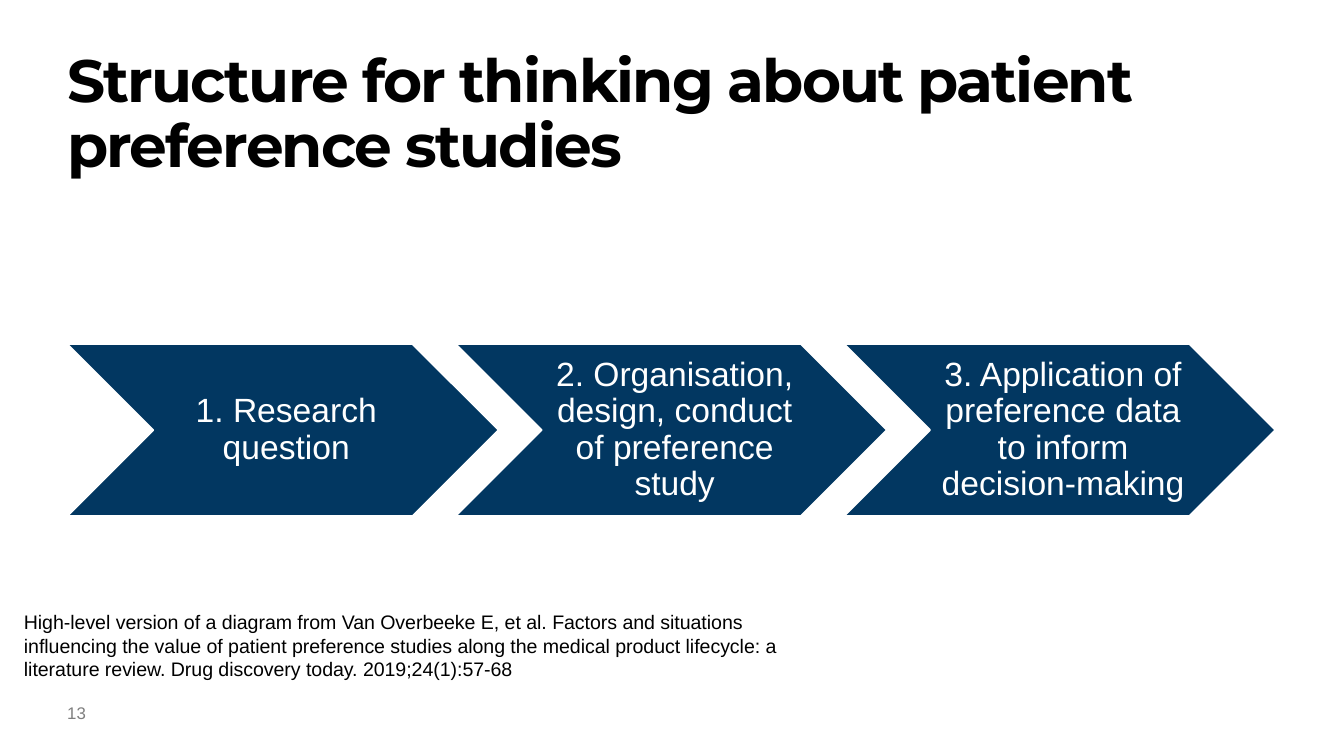
import dataclasses
import typing

import pptx
import pptx.dml.color
import pptx.enum.shapes
import pptx.enum.text
import pptx.util

SCALE = 4572  # EMU in one px, 200 px to the inch
ALIGN = pptx.enum.text.PP_ALIGN
ANCHOR = pptx.enum.text.MSO_ANCHOR


@dataclasses.dataclass(frozen=True)
class Theme:
    navy: str = "023761"
    white: str = "FFFFFF"
    black: str = "000000"
    grey: str = "7F7F7F"
    head: str = "Montserrat"
    body: str = "Arial"
    title: float = 32
    step: float = 18
    note: float = 10.5
    page: float = 9


class Box(typing.NamedTuple):
    left: int
    top: int
    width: int
    height: int


class Style(typing.NamedTuple):
    font: str
    size: float
    color: str
    bold: bool = False
    align: ALIGN = ALIGN.LEFT
    anchor: ANCHOR = ANCHOR.TOP
    inset: tuple[int, int, int, int] = (0, 0, 0, 0)
    lines: float = 1.0


THEME = Theme()
TITLE = Style(THEME.head, THEME.title, THEME.black, bold=True, lines=0.9)
STEP = Style(THEME.body, THEME.step, THEME.white, align=ALIGN.CENTER,
             anchor=ANCHOR.MIDDLE, inset=(16, 6, 6, 6), lines=0.9)
NOTE = Style(THEME.body, THEME.note, THEME.black, inset=(20, 10, 20, 10))
PAGE = Style(THEME.body, THEME.page, THEME.grey)

FIRST = Box(100, 512, 642, 256)
PITCH = 578
STEPS = (
    "1. Research question",
    "2. Organisation, design, conduct of preference study",
    "3. Application of preference data to inform decision-making",
)
SOURCE = (
    "High-level version of a diagram from Van Overbeeke E, et al. Factors and "
    "situations influencing the value of patient preference studies along the "
    "medical product lifecycle: a literature review. Drug discovery today. "
    "2019;24(1):57-68"
)


def px(count: int) -> pptx.util.Emu:
    return pptx.util.Emu(count * SCALE)


def rgb(code: str) -> pptx.dml.color.RGBColor:
    return pptx.dml.color.RGBColor.from_string(code)


def write(shape, text: str, style: Style) -> None:
    frame = shape.text_frame
    frame.text = text
    frame.word_wrap = True
    frame.auto_size = pptx.enum.text.MSO_AUTO_SIZE.NONE
    frame.vertical_anchor = style.anchor
    (frame.margin_left, frame.margin_top,
     frame.margin_right, frame.margin_bottom) = map(px, style.inset)
    para = frame.paragraphs[0]
    para.alignment = style.align
    para.line_spacing = style.lines
    font = para.runs[0].font
    font.name = style.font
    font.size = pptx.util.Pt(style.size)
    font.bold = style.bold
    font.color.rgb = rgb(style.color)


def add_title(slide, box: Box, text: str) -> None:
    title = slide.shapes.title
    title.left, title.top, title.width, title.height = map(px, box)
    write(title, text, TITLE)
    run = title.text_frame.paragraphs[0].runs[0]
    run._r.get_or_add_rPr().set("spc", "-100")


def add_text(slide, box: Box, text: str, style: Style) -> None:
    write(slide.shapes.add_textbox(*map(px, box)), text, style)


def add_step(slide, box: Box, text: str) -> None:
    kind = pptx.enum.shapes.MSO_SHAPE.CHEVRON
    shape = slide.shapes.add_shape(kind, *map(px, box))
    shape.shadow.inherit = False
    shape.fill.solid()
    shape.fill.fore_color.rgb = rgb(THEME.navy)
    shape.line.color.rgb = rgb(THEME.white)
    shape.line.width = pptx.util.Pt(1)
    write(shape, text, STEP)


def main() -> None:
    deck = pptx.Presentation()
    deck.slide_width, deck.slide_height = px(2000), px(1125)
    slide = deck.slides.add_slide(deck.slide_layouts[5])
    add_title(slide, Box(100, 76, 1800, 210),
              "Structure for thinking about patient preference studies")
    add_text(slide, Box(100, 1046, 50, 50), "13", PAGE)
    for index, text in enumerate(STEPS):
        add_step(slide, FIRST._replace(left=FIRST.left + index * PITCH), text)
    add_text(slide, Box(16, 898, 1168, 162), SOURCE, NOTE)
    deck.save("out.pptx")


if __name__ == "__main__":
    main()
